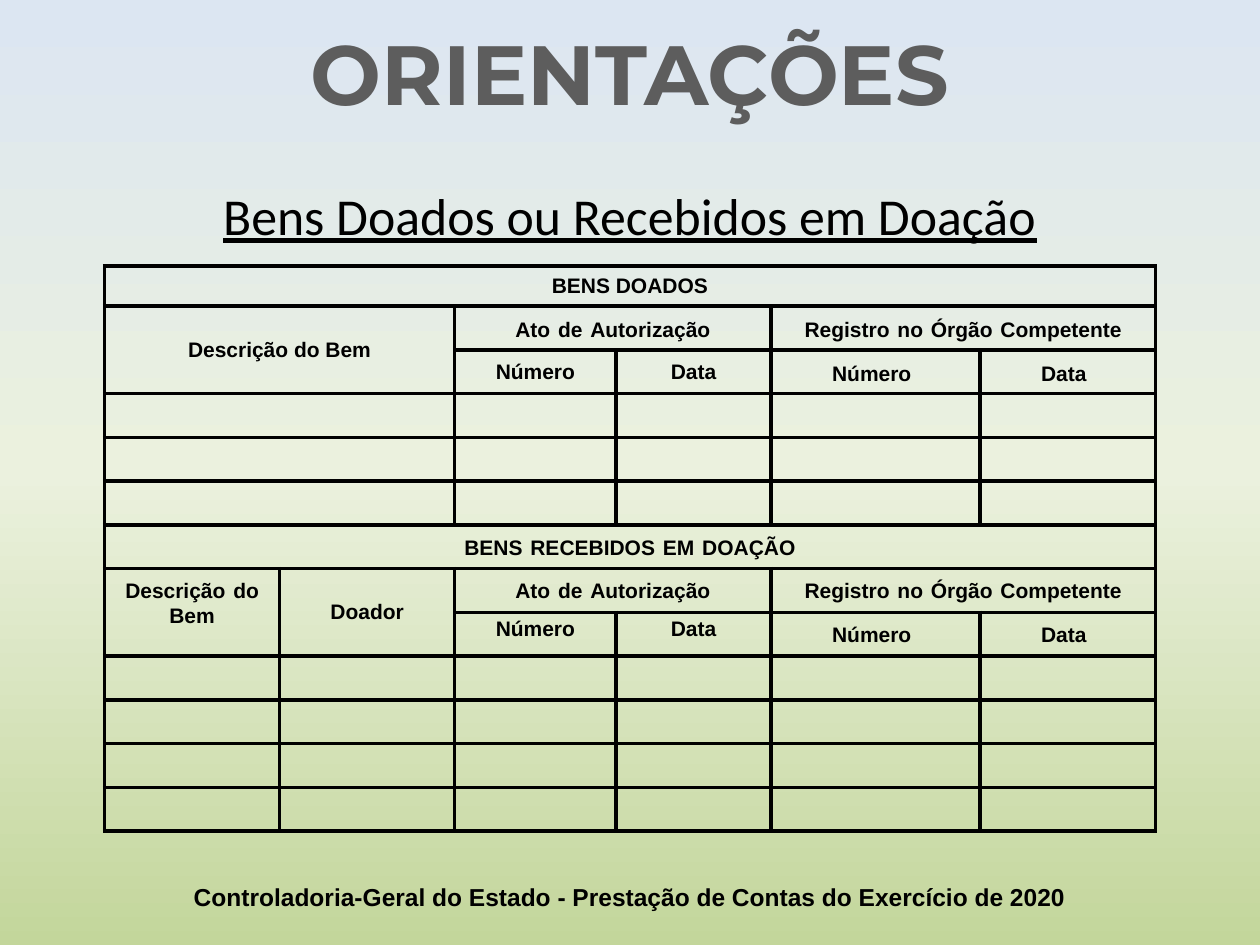
"""Builds the guidance slide on donated goods and goods received by donation."""
from copy import deepcopy

from lxml import etree
from pptx import Presentation
from pptx import util as u
from pptx.dml.color import RGBColor
from pptx.enum import text as t
from pptx.oxml.ns import qn

BLACK = RGBColor(0x00, 0x00, 0x00)
GREY = RGBColor(0x5D, 0x5D, 0x5D)
SKY = RGBColor(0xDC, 0xE6, 0xF2)
CREAM = RGBColor(0xEB, 0xF1, 0xDE)
GREEN = RGBColor(0xC3, 0xD6, 0x9B)

BACKDROP = [(0, SKY), (0.5, CREAM), (1, GREEN)]

HEADINGS = [
    ("Controladoria-Geral do Estado - Prestação de Contas do Exercício de 2020",
     (0.5, 6.95, 9, 0.34), dict(size=14, bold=True)),
    ("Bens Doados ou Recebidos em Doação",
     (1.5, 1.41, 7, 0.55), dict(size=29.6, font="Calibri", underline=True)),
    ("ORIENTAÇÕES",
     (0.06, 0.12, 9.88, 0.91),
     dict(size=48, font="Montserrat", bold=True, color=GREY)),
]

LEFT, TOP = 0.83, 2.11
COLUMNS = [1.39, 1.39, 1.28, 1.23, 1.66, 1.39]
ROWS = 13
FIRST_ROW, GRID_HEIGHT = 0.32, 4.49
RECEIVED_ROW = 6
BORDER = 2.25

TIGHT, WIDE = 12, 16
COMMON_HEADER = [
    (1, 2, 1, 2, "Ato de Autorização", WIDE),
    (1, 4, 1, 2, "Registro no Órgão Competente", WIDE),
    (2, 2, 1, 1, "Número", TIGHT),
    (2, 3, 1, 1, "Data", TIGHT),
    (2, 4, 1, 1, "Número ", WIDE),
    (2, 5, 1, 1, "Data ", WIDE),
]
DONATED = [
    (0, 0, 1, 6, "BENS DOADOS", TIGHT),
    (1, 0, 2, 2, "Descrição do Bem", TIGHT),
    *[(row, 0, 1, 2, "", TIGHT) for row in (3, 4, 5)],
]
RECEIVED = [
    (0, 0, 1, 6, "BENS RECEBIDOS EM DOAÇÃO", WIDE),
    (1, 0, 2, 1, "Descrição do Bem", WIDE),
    (1, 1, 2, 1, "Doador", TIGHT),
]
SECTIONS = [
    (0, DONATED + COMMON_HEADER, t.MSO_ANCHOR.MIDDLE),
    (RECEIVED_ROW, RECEIVED + COMMON_HEADER, t.MSO_ANCHOR.TOP),
]


def write(frame, content, size=12, font="Arial", color=BLACK, bold=False,
          underline=False, space_size=None):
    """Write one centred paragraph; spaces may have their own size."""
    paragraph = frame.paragraphs[0]
    paragraph.alignment = t.PP_ALIGN.CENTER
    pieces = [(content, size)]
    if space_size and space_size != size:
        words = content.split(" ")
        pieces = [(words[0], size)]
        for word in words[1:]:
            pieces += [(" ", space_size), (word, size)]
    for piece, points in pieces:
        if piece:
            run = paragraph.add_run()
            run.text = piece
            run.font.size = u.Pt(points)
            run.font.name = font
            run.font.bold = bold
            run.font.underline = underline
            run.font.color.rgb = color


def paint_background(slide):
    fill = slide.background.fill
    fill.gradient()
    fill.gradient_angle = 270
    stops = slide.element.find(".//" + qn("a:gsLst"))
    stops.append(deepcopy(stops[-1]))
    for stop, (position, color) in zip(fill.gradient_stops, BACKDROP):
        stop.position = position
        stop.color.rgb = color


def style_cell(cell):
    properties = cell._tc.get_or_add_tcPr()
    for side in ("L", "R", "T", "B"):
        line = etree.SubElement(properties, qn(f"a:ln{side}"), w=str(u.Pt(BORDER)))
        solid = etree.SubElement(line, qn("a:solidFill"))
        etree.SubElement(solid, qn("a:srgbClr"), val=str(BLACK))
    cell.fill.background()
    cell.margin_left = cell.margin_right = u.Inches(0.04)
    cell.margin_top = cell.margin_bottom = u.Inches(0.04)


def add_goods_table(slide):
    goods = slide.shapes.add_table(
        ROWS, len(COLUMNS), u.Inches(LEFT), u.Inches(TOP),
        u.Inches(sum(COLUMNS)), u.Inches(GRID_HEIGHT)).table
    goods.first_row = goods.horz_banding = False
    for column, width in zip(goods.columns, COLUMNS):
        column.width = u.Inches(width)
    for index, row in enumerate(goods.rows):
        other = (GRID_HEIGHT - FIRST_ROW) / (ROWS - 1)
        row.height = u.Inches(other if index else FIRST_ROW)
    for cell in goods.iter_cells():
        style_cell(cell)
    for start, labels, anchor in SECTIONS:
        for row, col, high, wide, label, space_size in labels:
            cell = goods.cell(start + row, col)
            if high * wide > 1:
                cell.merge(goods.cell(start + row + high - 1, col + wide - 1))
            middle = label == "Doador"
            cell.vertical_anchor = t.MSO_ANCHOR.MIDDLE if middle else anchor
            write(cell.text_frame, label, bold=True, space_size=space_size)
    for cell in goods.iter_cells():
        if not cell.text:
            paragraph = cell.text_frame.paragraphs[0]
            etree.SubElement(paragraph._p, qn("a:endParaRPr"), sz="1200")


def main():
    deck = Presentation()
    deck.slide_width, deck.slide_height = u.Inches(10), u.Inches(7.5)
    slide = deck.slides.add_slide(deck.slide_layouts[6])
    paint_background(slide)
    add_goods_table(slide)
    for content, place, style in HEADINGS:
        frame = slide.shapes.add_textbox(*map(u.Inches, place)).text_frame
        frame.word_wrap = True
        write(frame, content, **style)
    deck.save("out.pptx")


if __name__ == "__main__":
    main()
